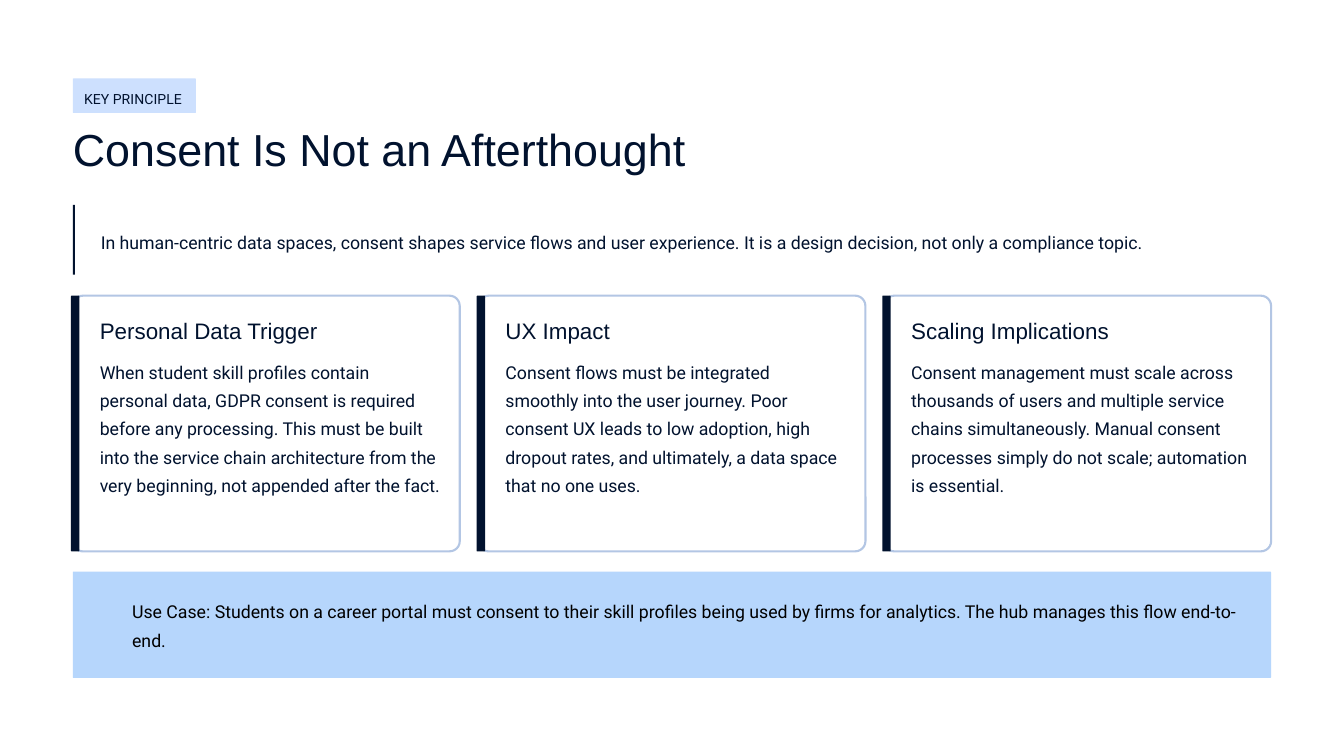
from pptx import Presentation
from pptx.dml.color import RGBColor
from pptx.enum.shapes import MSO_SHAPE
from pptx.enum.text import MSO_ANCHOR, MSO_AUTO_SIZE, PP_ALIGN
from pptx.util import Pt

RECT, ROUND = MSO_SHAPE.RECTANGLE, MSO_SHAPE.ROUNDED_RECTANGLE
TOP, LEFT, FIXED = MSO_ANCHOR.TOP, PP_ALIGN.LEFT, MSO_AUTO_SIZE.NONE
HEAD, BODY = "Arial", "Roboto"
COLORS = {
    "page": "FFFFFF", "ink": "01122E", "tag": "CDE0FE",
    "edge": "B3C6E4", "band": "B6D6FC", "black": "000000",
}

# Card heading and text
CARDS = [
    ("Personal Data Trigger",
     "When student skill profiles contain personal data, GDPR consent is required "
     "before any processing. This must be built into the service chain architecture "
     "from the very beginning, not appended after the fact."),
    ("UX Impact",
     "Consent flows must be integrated smoothly into the user journey. Poor consent "
     "UX leads to low adoption, high dropout rates, and ultimately, a data space "
     "that no one uses."),
    ("Scaling Implications",
     "Consent management must scale across thousands of users and multiple service "
     "chains simultaneously. Manual consent processes simply do not scale; "
     "automation is essential."),
]


def color(name):
    return RGBColor.from_string(COLORS[name])


def panel(slide, kind, box, fill, round_by=0, edge=None):
    shape = slide.shapes.add_shape(kind, *map(Pt, box))
    shape.shadow.inherit = False
    shape.fill.solid()
    shape.fill.fore_color.rgb = color(fill)
    if round_by:
        shape.adjustments[0] = round_by
    if edge:
        shape.line.color.rgb = color(edge)
        shape.line.width = Pt(1.12)
    else:
        shape.line.fill.background()


def write(shape, text, size, font=BODY, ink="ink", space=1.33):
    frame = shape.text_frame
    frame.word_wrap = True
    frame.auto_size = FIXED
    frame.vertical_anchor = TOP
    frame.margin_left = frame.margin_right = 0
    frame.margin_top = frame.margin_bottom = 0
    para = frame.paragraphs[0]
    para.alignment = LEFT
    para.line_spacing = space
    run = para.add_run()
    run.text = text
    run.font.size = Pt(size)
    run.font.name = font
    run.font.color.rgb = color(ink)


def label(slide, box, text, size, **style):
    write(slide.shapes.add_textbox(*map(Pt, box)), text, size, **style)


def header(slide, x, y, w):
    panel(slide, ROUND, (x, y, 66, 18.5), "tag", 0.025)
    label(slide, (x + 6, y + 3.5, 90, 12), "KEY PRINCIPLE", 7.5)
    title = slide.shapes.title
    title.left, title.top, title.width, title.height = map(Pt, (x, y + 22, w, 30))
    write(title, "Consent Is Not an Afterthought", 24, font=HEAD, space=1.04)


def lead(slide, x, y, w, h):
    panel(slide, RECT, (x, y, 1.12, h), "ink")
    label(slide, (x + 15, y + 10.5, w - 15, 16),
          "In human-centric data spaces, consent shapes service flows and user "
          "experience. It is a design decision, not only a compliance topic.", 9.5)


def card(slide, x, y, w, h, head, text):
    panel(slide, ROUND, (x, y, w, h), "page", 0.04, "edge")
    panel(slide, ROUND, (x - 1, y, 4.5, h), "ink", 0.1)
    label(slide, (x + 14.5, y + 10.9, w - 25, 15), head, 12, font=HEAD, space=1.04)
    label(slide, (x + 14.5, y + 31.7, w - 25, 94), text, 9.5)


def cards(slide, x, y, w, h, gap=10):
    wide = (w - gap * (len(CARDS) - 1)) / len(CARDS)
    for i, (head, text) in enumerate(CARDS):
        card(slide, x + i * (wide + gap), y, wide, h, head, text)


def case(slide, x, y, w, h):
    panel(slide, ROUND, (x, y, w, h), "band", 0.01)
    label(slide, (x + 31.8, y + 12.2, w - 41.5, 31),
          "Use Case: Students on a career portal must consent to their skill profiles "
          "being used by firms for analytics. The hub manages this flow end-to-end.",
          9.5, ink="black")


def main():
    deck = Presentation()
    deck.slide_width, deck.slide_height = Pt(720), Pt(405)
    slide = deck.slides.add_slide(deck.slide_layouts[5])
    slide.background.fill.solid()
    slide.background.fill.fore_color.rgb = color("page")

    x, w = 39, 642
    header(slide, x, 42, w)
    lead(slide, x, 109.7, w, 37.5)
    cards(slide, x, 158.4, w, 137)
    case(slide, x, 306.2, w, 57)
    deck.save("out.pptx")


if __name__ == "__main__":
    main()
